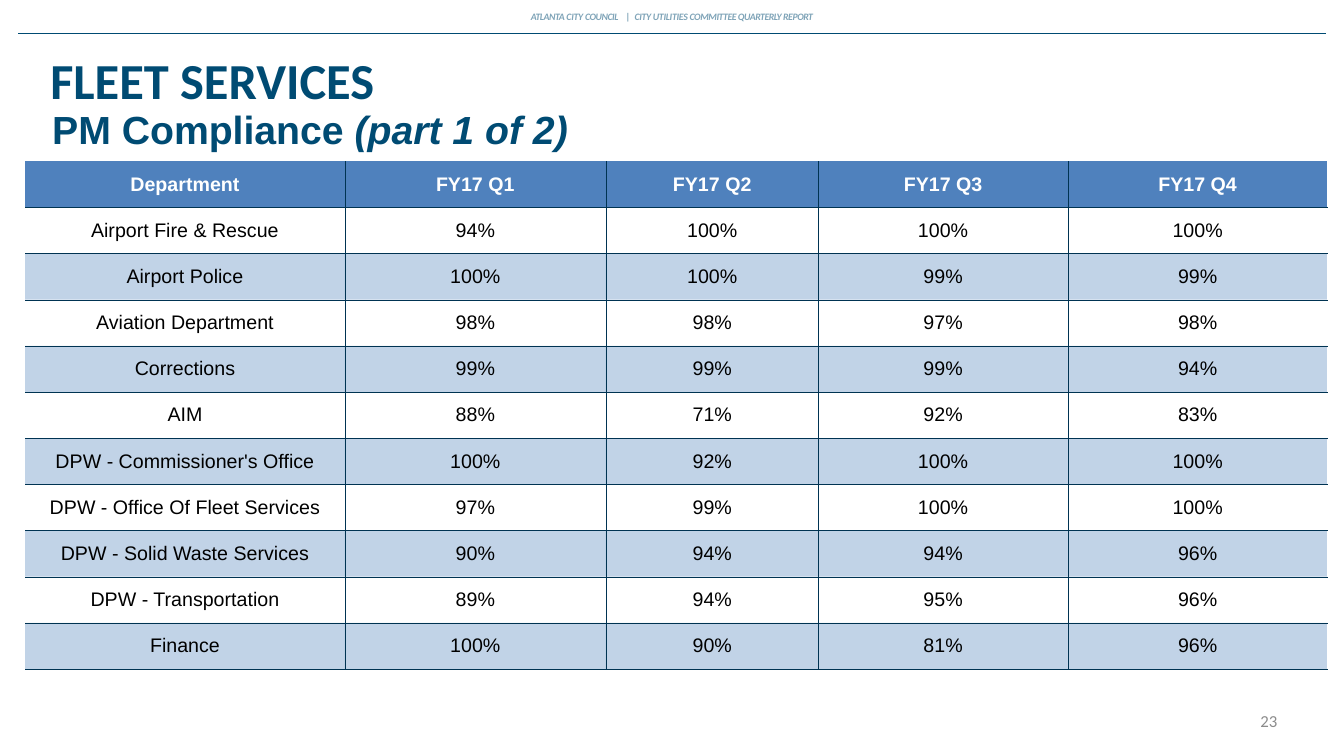
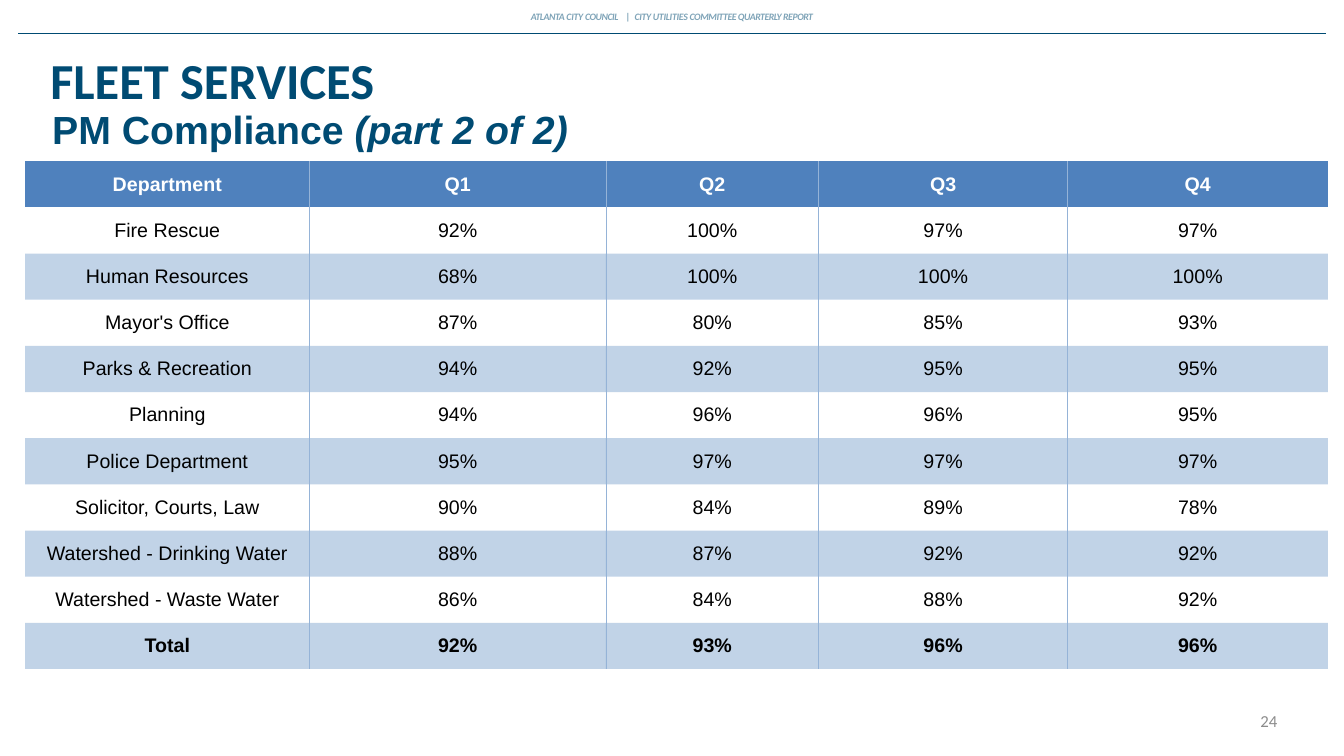
import dataclasses

import lxml.etree
import pptx
import pptx.dml.color
import pptx.enum.shapes
import pptx.enum.text
import pptx.oxml.ns
import pptx.util

Inches = pptx.util.Inches
Pt = pptx.util.Pt
Align = pptx.enum.text.PP_ALIGN
Anchor = pptx.enum.text.MSO_ANCHOR
qn = pptx.oxml.ns.qn


@dataclasses.dataclass(frozen=True)
class Theme:
    navy: str = "004B73"
    running_head: str = "7FA4B8"
    page_grey: str = "8C8C8C"
    table_blue: str = "4F81BD"
    band_opacity: int = 35
    grid_dark: str = "003352"
    grid_light: str = "95B3D7"
    white: str = "FFFFFF"
    black: str = "000000"
    heading_font: str = "Calibri"
    body_font: str = "Arial"
    running_head_size: float = 7
    title_size: float = 36
    subtitle_size: float = 28
    table_size: float = 14
    page_size: float = 12


THEME = Theme()


@dataclasses.dataclass(frozen=True)
class Grid:
    """Table rules as (colour, points); None leaves a rule out."""
    columns: tuple
    rows: tuple | None = None
    right_edge: tuple | None = None


@dataclasses.dataclass(frozen=True)
class Report:
    page: int
    section: str
    widths: tuple
    grid: Grid
    rows: tuple
    has_total: bool = False


REPORTS = (
    Report(
        23, "(part 1 of 2)", (3.17, 2.59, 2.11, 2.47, 2.58),
        Grid((THEME.grid_dark, 0.25), (THEME.grid_dark, 0.25), (THEME.white, 1)),
        (
            ("Department", "FY17 Q1", "FY17 Q2", "FY17 Q3", "FY17 Q4"),
            ("Airport Fire & Rescue", "94%", "100%", "100%", "100%"),
            ("Airport Police", "100%", "100%", "99%", "99%"),
            ("Aviation Department", "98%", "98%", "97%", "98%"),
            ("Corrections", "99%", "99%", "99%", "94%"),
            ("AIM", "88%", "71%", "92%", "83%"),
            ("DPW - Commissioner's Office", "100%", "92%", "100%", "100%"),
            ("DPW - Office Of Fleet Services", "97%", "99%", "100%", "100%"),
            ("DPW - Solid Waste Services", "90%", "94%", "94%", "96%"),
            ("DPW - Transportation", "89%", "94%", "95%", "96%"),
            ("Finance", "100%", "90%", "81%", "96%"),
        ),
    ),
    Report(
        24, "(part 2 of 2)", (2.82, 2.94, 2.11, 2.47, 2.58),
        Grid((THEME.grid_light, 0.5)),
        (
            ("Department", "Q1", "Q2", "Q3", "Q4"),
            ("Fire Rescue", "92%", "100%", "97%", "97%"),
            ("Human Resources", "68%", "100%", "100%", "100%"),
            ("Mayor's Office", "87%", "80%", "85%", "93%"),
            ("Parks & Recreation", "94%", "92%", "95%", "95%"),
            ("Planning", "94%", "96%", "96%", "95%"),
            ("Police Department", "95%", "97%", "97%", "97%"),
            ("Solicitor, Courts, Law", "90%", "84%", "89%", "78%"),
            ("Watershed - Drinking Water", "88%", "87%", "92%", "92%"),
            ("Watershed - Waste Water", "86%", "84%", "88%", "92%"),
            ("Total", "92%", "93%", "96%", "96%"),
        ),
        has_total=True,
    ),
)


def rgb(colour):
    return pptx.dml.color.RGBColor.from_string(colour)


def set_font(paragraph, name, size, colour, bold=False, italic=False):
    font = paragraph.font
    font.name, font.size = name, Pt(size)
    font.bold, font.italic = bold, italic
    font.color.rgb = rgb(colour)


def add_line_of_text(slide, left, top, width, height, margins=(0, 0), anchor=Anchor.TOP):
    """Add an empty one-line box and return its paragraph; margins are (sides, ends)."""
    frame = slide.shapes.add_textbox(
        Inches(left), Inches(top), Inches(width), Inches(height)).text_frame
    frame.word_wrap = True
    frame.vertical_anchor = anchor
    frame.margin_left = frame.margin_right = Inches(margins[0])
    frame.margin_top = frame.margin_bottom = Inches(margins[1])
    return frame.paragraphs[0]


def add_run(paragraph, text, spacing=None):
    """Add a run, with its letter spacing in points."""
    run = paragraph.add_run()
    run.text = text
    if spacing is not None:
        run.font._element.set("spc", str(round(spacing * 100)))
    return run


def add_running_head(slide):
    head = add_line_of_text(slide, 4.86, 0.11, 3.61, 0.26)
    head.alignment = Align.CENTER
    set_font(head, THEME.heading_font, THEME.running_head_size,
             THEME.running_head, bold=True, italic=True)
    for text, spacing in (
        ("ATLANTA ", -0.3), ("CITY ", -0.2), ("COUNCIL", -0.3),
        (" ", 3.6), ("|", -0.1), (" ", 1.4),
        ("CITY UTILITIES ", -0.2), ("COMMITTEE QUARTERLY REPORT", -0.3),
    ):
        add_run(head, text, spacing)

    rule = slide.shapes.add_connector(
        pptx.enum.shapes.MSO_CONNECTOR.STRAIGHT,
        Inches(0.18), Inches(0.33), Inches(13.15), Inches(0.33))
    rule.line.color.rgb = rgb(THEME.navy)
    rule.line.width = Pt(0.75)
    lxml.etree.SubElement(rule._element.spPr, qn("a:effectLst"))


def add_titles(slide, section):
    title = add_line_of_text(slide, 0, 0.48, 13.33, 0.61, (0.5, 0), Anchor.MIDDLE)
    add_run(title, "FLEET SERVICES")
    set_font(title, THEME.heading_font, THEME.title_size, THEME.navy, bold=True)

    subtitle = add_line_of_text(slide, 0.42, 1, 12.36, 0.5, (0.1, 0.05))
    add_run(subtitle, "PM Compliance ")
    add_run(subtitle, section).font.italic = True
    set_font(subtitle, THEME.body_font, THEME.subtitle_size, THEME.navy, bold=True)


def add_page_number(slide, page):
    number = add_line_of_text(slide, 9.6, 7.05, 3.07, 0.2, anchor=Anchor.MIDDLE)
    number.alignment = Align.RIGHT
    add_run(number, str(page))
    set_font(number, THEME.heading_font, THEME.page_size, THEME.page_grey)


def set_borders(cell, borders):
    """Draw the left, right, top and bottom rules, in that order."""
    properties = cell._tc.get_or_add_tcPr()
    for side, border in zip("LRTB", borders):
        line = lxml.etree.SubElement(properties, qn(f"a:ln{side}"))
        if border is None:
            lxml.etree.SubElement(line, qn("a:noFill"))
            continue
        colour, width = border
        line.set("w", str(Pt(width)))
        fill = lxml.etree.SubElement(line, qn("a:solidFill"))
        lxml.etree.SubElement(fill, qn("a:srgbClr"), val=colour)


def fill_cell(cell, row):
    """Solid header, then clear and tinted rows in turn."""
    if row % 2:
        cell.fill.background()
        return
    cell.fill.solid()
    cell.fill.fore_color.rgb = rgb(THEME.table_blue)
    if row:
        colour = cell._tc.tcPr.find(f"{qn('a:solidFill')}/{qn('a:srgbClr')}")
        lxml.etree.SubElement(colour, qn("a:alpha"), val=str(THEME.band_opacity * 1000))


def add_compliance_table(slide, report):
    row_count, column_count = len(report.rows), len(report.widths)
    table = slide.shapes.add_table(
        row_count, column_count, Inches(0.25), Inches(1.6),
        Inches(sum(report.widths)), Inches(5.04)).table
    table.horz_banding = False
    for column, width in zip(table.columns, report.widths):
        column.width = Inches(width)

    grid = report.grid
    for row, values in enumerate(report.rows):
        is_header = row == 0
        is_total = report.has_total and row == row_count - 1
        for column, value in enumerate(values):
            cell = table.cell(row, column)
            set_borders(cell, (
                grid.columns if column else None,
                grid.columns if column < column_count - 1 else grid.right_edge,
                None if is_header else grid.rows,
                grid.rows,
            ))
            fill_cell(cell, row)
            cell.vertical_anchor = Anchor.MIDDLE
            cell.text = value
            paragraph = cell.text_frame.paragraphs[0]
            paragraph.alignment = Align.CENTER
            set_font(paragraph, THEME.body_font, THEME.table_size,
                     THEME.white if is_header else THEME.black,
                     bold=is_header or is_total)


def main():
    deck = pptx.Presentation()
    deck.slide_width, deck.slide_height = Inches(13.33), Inches(7.5)
    blank = deck.slide_layouts[6]
    for report in REPORTS:
        slide = deck.slides.add_slide(blank)
        add_running_head(slide)
        add_titles(slide, report.section)
        add_page_number(slide, report.page)
        add_compliance_table(slide, report)
    deck.save("out.pptx")


if __name__ == "__main__":
    main()
